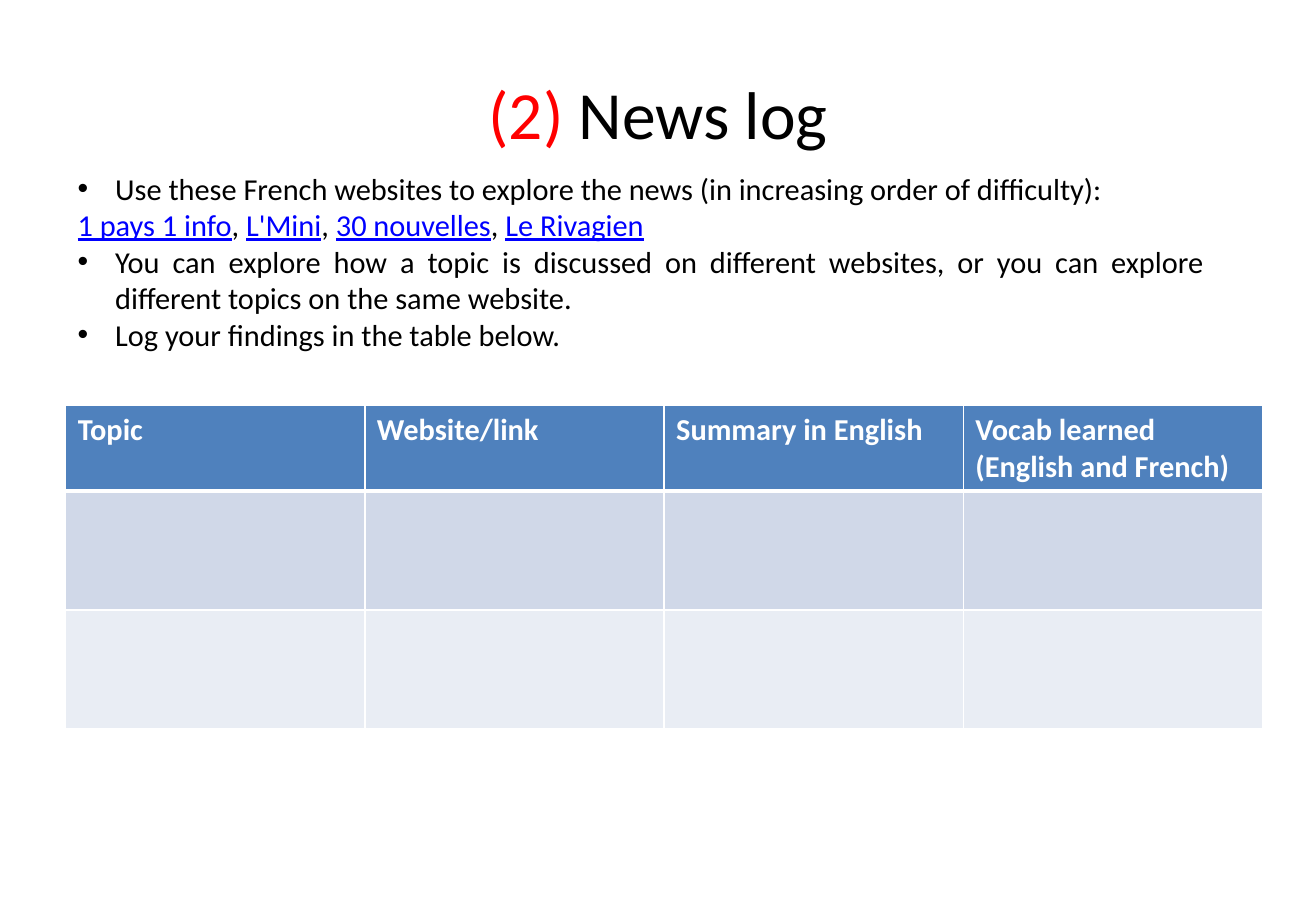
from lxml import etree
from pptx import Presentation
from pptx import util as u
from pptx.dml.color import RGBColor
from pptx.enum import text
from pptx.oxml import ns

COLORS = {
    "ink": "000000",
    "number": "FF0000",
    "link": "0000FF",
    "white": "FFFFFF",
    "header": "4F81BD",
    "band_dark": "D0D8E8",
    "band_light": "E9EDF4",
}
FONT = "Calibri"
BODY_SIZE = 18
HEADINGS = ["Topic", "Website/link", "Summary in English",
            "Vocab learned (English and French)"]
ROWS = [("header", 0.69, 3), ("band_dark", 0.98, 1), ("band_light", 0.98, 1)]
WEBSITES = ["1 pays 1 info", "L'Mini", "30\u00a0nouvelles", "Le Rivagien"]


def add_span(para, words, size=BODY_SIZE, color="ink", bold=False, underline=False):
    """Append one formatted run to a paragraph."""
    span = para.add_run()
    span.text = words
    font = span.font
    font.name, font.size = FONT, u.Pt(size)
    font.bold, font.underline = bold, underline
    font.color.rgb = RGBColor.from_string(COLORS[color])


def add_box(page, left, top, width, height, anchor):
    """Add a wrapping text box and return its text frame."""
    box = page.shapes.add_textbox(*map(u.Inches, (left, top, width, height)))
    frame = box.text_frame
    frame.word_wrap = True
    frame.vertical_anchor = anchor
    return frame


def add_bullet(para):
    """Give a paragraph a round bullet with a hanging indent."""
    props = para._p.get_or_add_pPr()
    props.set("marL", str(u.Inches(0.31)))
    props.set("indent", str(-u.Inches(0.31)))
    etree.SubElement(props, ns.qn("a:buFont"), typeface="Arial")
    etree.SubElement(props, ns.qn("a:buChar"), char="•")


def style_cell(cell, fill, bottom_width):
    """Set the white borders and the fill of a table cell."""
    props = cell._tc.get_or_add_tcPr()
    for side, width in (("L", 1), ("R", 1), ("T", 1), ("B", bottom_width)):
        line = etree.SubElement(props, ns.qn(f"a:ln{side}"), w=str(u.Pt(width)))
        paint = etree.SubElement(line, ns.qn("a:solidFill"))
        etree.SubElement(paint, ns.qn("a:srgbClr"), val=COLORS["white"])
    cell.fill.solid()
    cell.fill.fore_color.rgb = RGBColor.from_string(COLORS[fill])


def add_title(page):
    """Add the numbered, centred title."""
    frame = add_box(page, 0.54, 0.3, 9.75, 1.25, text.MSO_ANCHOR.MIDDLE)
    para = frame.paragraphs[0]
    para.alignment = text.PP_ALIGN.CENTER
    add_span(para, "(2)", 40, "number")
    add_span(para, " News log", 40)


def add_instructions(page):
    """Add the bulleted instructions and the line of websites."""
    frame = add_box(page, 0.54, 1.35, 9.47, 2.22, text.MSO_ANCHOR.TOP)
    intro = frame.paragraphs[0]
    add_bullet(intro)
    add_span(intro, "Use these French websites to explore the news "
                    "(in increasing order of difficulty):")
    sites = frame.add_paragraph()
    sites.alignment = text.PP_ALIGN.JUSTIFY
    for index, name in enumerate(WEBSITES):
        if index:
            add_span(sites, ", ")
        add_span(sites, name, color="link", underline=True)
    for words in ("You can explore how a topic is discussed on different websites, "
                  "or you can explore different topics on the same website.",
                  "Log your findings in the table below."):
        para = frame.add_paragraph()
        para.alignment = text.PP_ALIGN.JUSTIFY
        add_bullet(para)
        add_span(para, words)


def add_log_table(page):
    """Add the news log with its header and two blank rows."""
    height = sum(row_height for _, row_height, _ in ROWS)
    table = page.shapes.add_table(
        len(ROWS), len(HEADINGS), u.Inches(0.54), u.Inches(3.34),
        u.Inches(9.85), u.Inches(height)).table
    for row, (fill, row_height, bottom_width) in zip(table.rows, ROWS):
        row.height = u.Inches(row_height)
        for cell in row.cells:
            style_cell(cell, fill, bottom_width)
    for cell, heading in zip(table.rows[0].cells, HEADINGS):
        add_span(cell.text_frame.paragraphs[0], heading, color="white", bold=True)


def main():
    """Build the news log slide and save it."""
    deck = Presentation()
    deck.slide_width, deck.slide_height = u.Inches(10.83), u.Inches(7.5)
    page = deck.slides.add_slide(deck.slide_layouts[6])
    add_title(page)
    add_instructions(page)
    add_log_table(page)
    deck.save("out.pptx")


if __name__ == "__main__":
    main()
